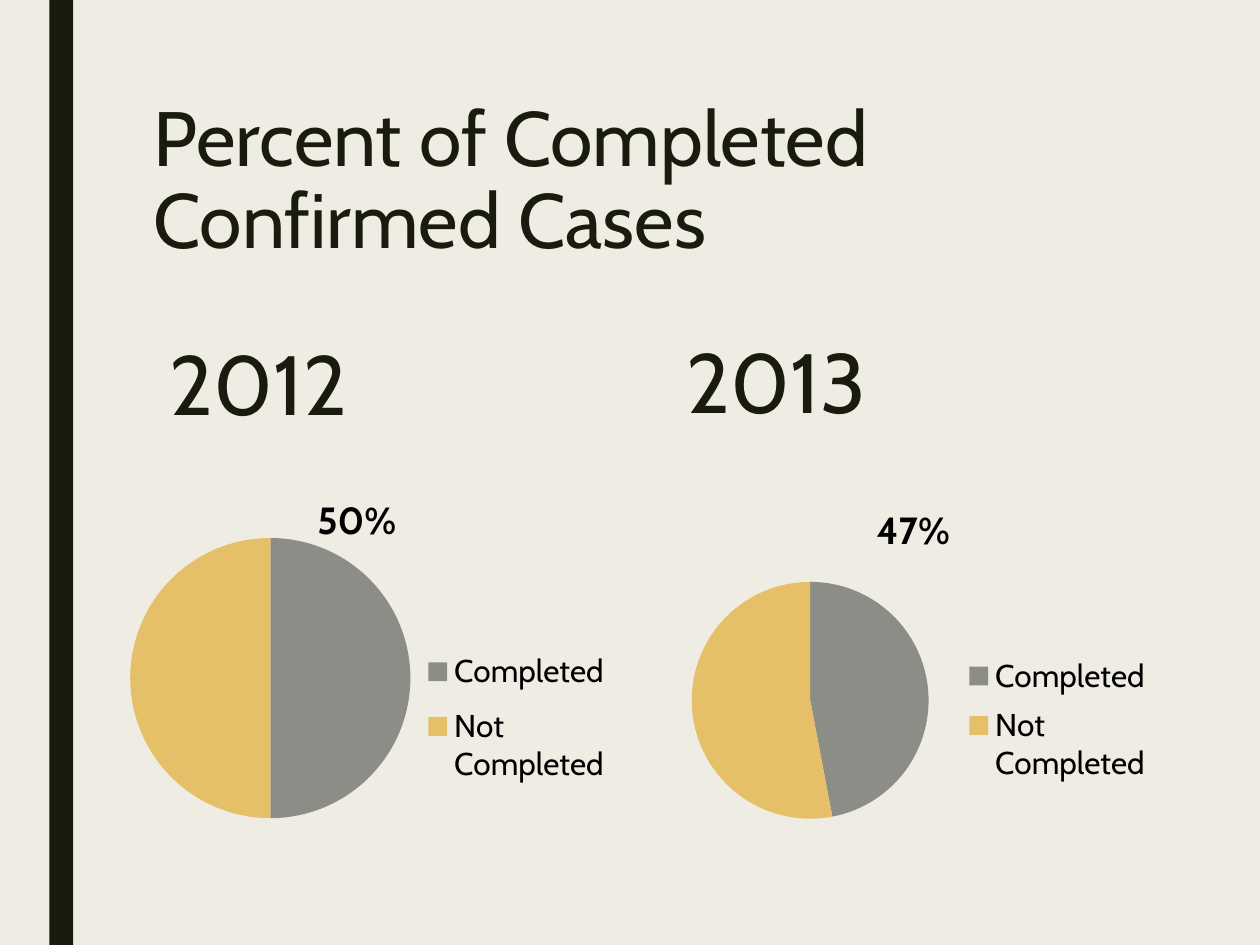
from lxml import etree
from pptx import Presentation
from pptx.chart.data import CategoryChartData as ChartData
from pptx.dml.color import RGBColor
from pptx.enum.chart import XL_CHART_TYPE as ChartType, XL_LEGEND_POSITION as LegendSide
from pptx.enum.shapes import MSO_SHAPE as Shape
from pptx.enum.text import MSO_ANCHOR as Anchor
from pptx.oxml import parse_xml
from pptx.oxml.ns import nsdecls, qn
from pptx.util import Pt

FONT = "Cabin"
PAPER, DARK, BLACK = "EFEDE3", "191B0E", "000000"
SLICE_COLORS = {"Completed": "8C8D86", "Not Completed": "E6C069"}


def paint(color_format, color):
    color_format.rgb = RGBColor.from_string(color)


def fill_solid(fill, color):
    fill.solid()
    paint(fill.fore_color, color)


def format_font(font, color, **values):
    for name, value in {"name": FONT, **values}.items():
        setattr(font, name, value)
    fill_solid(font.fill, color)


def add_bar(page, frame, color):
    bar = page.shapes.add_shape(Shape.RECTANGLE, *map(Pt, frame))
    bar.shadow.inherit = False
    fill_solid(bar.fill, color)
    bar.line.fill.background()


def add_text(page, frame, text, size, spacing, anchor):
    box = page.shapes.add_textbox(*map(Pt, frame))
    for name, value in {"word_wrap": True, "vertical_anchor": anchor}.items():
        setattr(box.text_frame, name, value)
    para = box.text_frame.paragraphs[0]
    para.line_spacing = spacing
    span = para.add_run()
    span.text = text
    format_font(span.font, DARK, size=Pt(size))


def set_layout(parent, fractions, target=None, after=None):
    """Place a chart part at (x, y, w, h), as fractions of the chart."""
    for old in parent.findall(qn("c:layout")):
        parent.remove(old)
    layout = parse_xml(f"<c:layout {nsdecls('c')}><c:manualLayout/></c:layout>")
    values = {"layoutTarget": target, "xMode": "edge", "yMode": "edge",
              **dict(zip("xywh", fractions))}
    for tag, value in values.items():
        if value is not None:
            etree.SubElement(layout[0], qn(f"c:{tag}")).set("val", str(value))
    if after is None:
        parent.insert(0, layout)
    else:
        after.addnext(layout)


def add_pie(page, frame, percent, plot_area, legend_area):
    data = ChartData()
    data.categories = list(SLICE_COLORS)
    data.add_series("Series 1", [percent, 100 - percent])
    chart = page.shapes.add_chart(ChartType.PIE, *map(Pt, frame), data).chart
    format_font(chart.font, BLACK, size=Pt(18))

    # Title
    title = chart.chart_title
    title.text_frame.text = f"{percent}%"
    title.include_in_layout = False
    span = title.text_frame.paragraphs[0].runs[0]
    format_font(span.font, BLACK, size=Pt(21.6), bold=True)

    # Slices
    plot = chart.plots[0]
    plot.vary_by_categories = True
    for index, color in enumerate(SLICE_COLORS.values()):
        fill_solid(plot.series[0].points[index].format.fill, color)
    set_layout(chart.element.find(f".//{qn('c:plotArea')}"), plot_area, "inner")

    # Legend
    chart.has_legend = True
    legend = chart.legend
    legend.position = LegendSide.RIGHT
    legend.include_in_layout = False
    format_font(legend.font, BLACK, size=Pt(18))
    element = chart.element.find(f".//{qn('c:legend')}")
    set_layout(element, legend_area, after=element.find(qn("c:legendPos")))


def main():
    deck = Presentation()
    deck.slide_width, deck.slide_height = Pt(720), Pt(540)
    page = deck.slides.add_slide(deck.slide_layouts[6])
    fill_solid(page.background.fill, PAPER)
    add_bar(page, (28.2, 0, 13.6, 540), DARK)

    # Headings
    add_text(page, (80.6, 54, 567.4, 116.6), "Percent of Completed Confirmed Cases",
             44, 0.89, Anchor.TOP)
    for year, left, top in (("2012", 90, 185.8), ("2013", 385.2, 185)):
        add_text(page, (left, top, 262.8, 64.8), year, 48, 0.84, Anchor.BOTTOM)

    # Charts
    add_pie(page, (54, 270, 300, 208), 50,
            (0.04, 0.18, 0.59, 0.77), (0.63, 0.45, 0.36, 0.45))
    add_pie(page, (378, 275.8, 288, 202.3), 47,
            (0.06, 0.28, 0.47, 0.67), (0.59, 0.46, 0.39, 0.42))
    deck.save("out.pptx")


if __name__ == "__main__":
    main()
